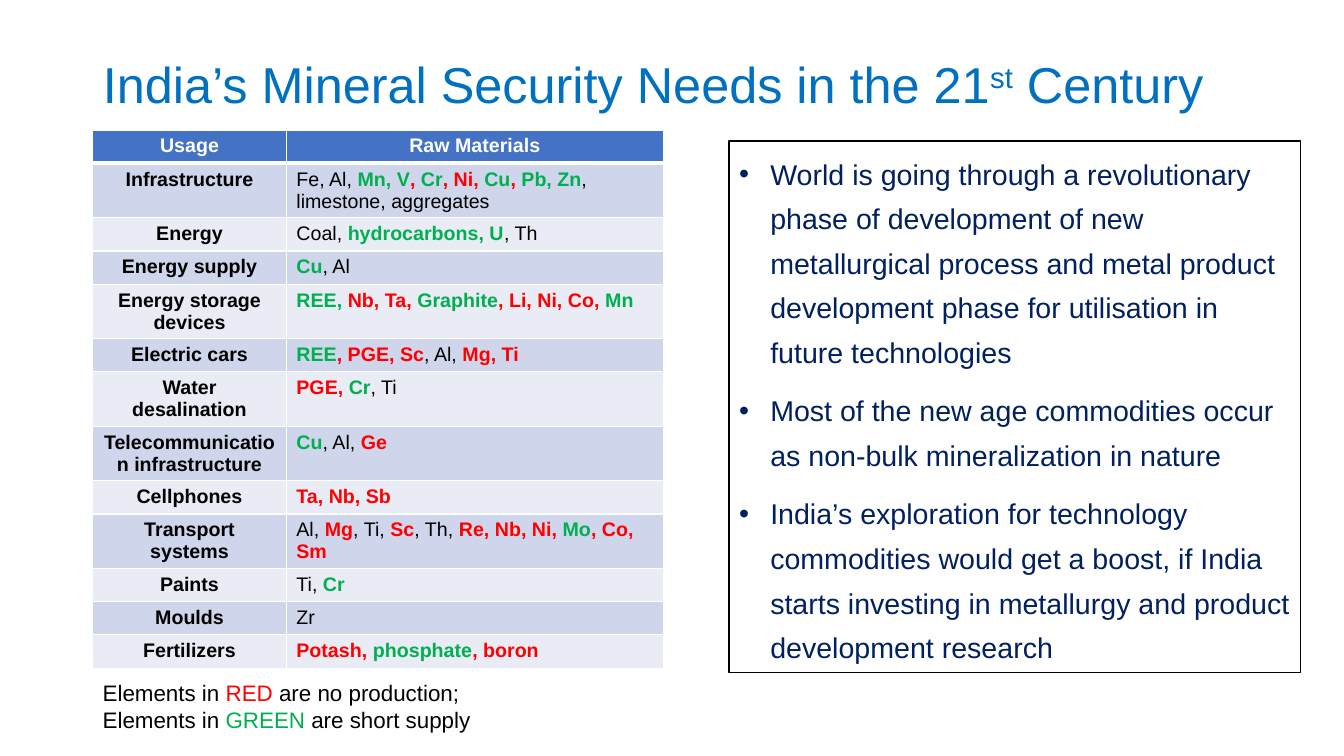
from lxml import etree
from pptx import Presentation
from pptx.dml.color import RGBColor
from pptx.enum import text
from pptx.oxml import ns
from pptx.util import Inches, Pt

FONT = "Arial"
BLACK, WHITE, RED, GREEN = "000000", "FFFFFF", "FF0000", "00B050"
BLUE, NAVY, HEADER = "0070C0", "002060", "4472C4"
BANDS = ("CFD5EA", "E9EBF5")

TITLE = (("India’s Mineral Security Needs in the 21", BLUE), ("st", BLUE), (" Century", BLUE))

# Usage, then the raw materials as (text, colour) runs
MATERIALS = (
    ("Infrastructure", (("Fe, Al, ", BLACK), ("Mn, V", GREEN), (", ", RED), ("Cr", GREEN),
                        (", Ni, ", RED), ("Cu", GREEN), (", ", RED), ("Pb, Zn", GREEN),
                        (", limestone, aggregates", BLACK))),
    ("Energy", (("Coal, ", BLACK), ("hydrocarbons, U", GREEN), (", Th", BLACK))),
    ("Energy supply", (("Cu", GREEN), (", Al", BLACK))),
    ("Energy storage devices", (("REE, ", GREEN), ("Nb, Ta, ", RED), ("Graphite", GREEN),
                                (", Li, Ni, Co, ", RED), ("Mn", GREEN))),
    ("Electric cars", (("REE", GREEN), (", PGE, Sc", RED), (", Al, ", BLACK), ("Mg, Ti", RED))),
    ("Water desalination", (("PGE, ", RED), ("Cr", GREEN), (", Ti", BLACK))),
    ("Telecommunication infrastructure", (("Cu", GREEN), (", Al, ", BLACK), ("Ge", RED))),
    ("Cellphones", (("Ta, Nb, Sb", RED),)),
    ("Transport systems", (("Al, ", BLACK), ("Mg", RED), (", Ti, ", BLACK), ("Sc", RED),
                           (", Th, ", BLACK), ("Re, Nb, Ni, ", RED), ("Mo", GREEN),
                           (", Co, Sm", RED))),
    ("Paints", (("Ti, ", BLACK), ("Cr", GREEN))),
    ("Moulds", (("Zr", BLACK),)),
    ("Fertilizers", (("Potash, ", RED), ("phosphate", GREEN), (", boron", RED))),
)
TWO_LINE_USAGES = ("Infrastructure", "Energy storage devices", "Water desalination",
                   "Telecommunication infrastructure", "Transport systems")

POINTS = (
    "World is going through a revolutionary phase of development of new metallurgical process "
    "and metal product development phase for utilisation in future technologies",
    "Most of the new age commodities occur as non-bulk mineralization in nature",
    "India’s exploration for technology commodities would get a boost, if India starts investing "
    "in metallurgy and product development research",
)

LEGEND = (("Elements in ", BLACK), ("RED", RED), (" are no production; Elements in ", BLACK),
          ("GREEN", GREEN), (" are short supply", BLACK))


def colour(value):
    return RGBColor.from_string(value)


def place(shape, left, top, width, height):
    shape.left, shape.top = Inches(left), Inches(top)
    shape.width, shape.height = Inches(width), Inches(height)


def style(font, size, hex_colour, bold=False):
    font.name, font.size, font.bold = FONT, Pt(size), bold
    font.color.rgb = colour(hex_colour)


def add_runs(paragraph, runs, size, bold_colours=()):
    for wording, hex_colour in runs:
        run = paragraph.add_run()
        run.text = wording
        style(run.font, size, hex_colour, hex_colour in bold_colours)


def set_borders(cell, bottom_width):
    """Draw white cell borders, one point wide except at the bottom."""
    properties = cell._tc.get_or_add_tcPr()
    for position, (side, width) in enumerate(zip("LRTB", (1, 1, 1, bottom_width))):
        line = etree.Element(ns.qn(f"a:ln{side}"), w=str(Pt(width)))
        fill = etree.SubElement(line, ns.qn("a:solidFill"))
        etree.SubElement(fill, ns.qn("a:srgbClr"), val=WHITE)
        properties.insert(position, line)


def fill_cell(cell, runs, fill, centred, bold_colours, bottom_width=1):
    cell.fill.solid()
    cell.fill.fore_color.rgb = colour(fill)
    set_borders(cell, bottom_width)
    paragraph = cell.text_frame.paragraphs[0]
    paragraph.alignment = text.PP_ALIGN.CENTER if centred else text.PP_ALIGN.LEFT
    add_runs(paragraph, runs, 14, bold_colours)


def add_title(slide):
    title = slide.shapes.title
    place(title, 0.92, 0.14, 11.5, 1.45)
    title.text_frame.vertical_anchor = text.MSO_ANCHOR.MIDDLE
    title.text_frame.auto_size = text.MSO_AUTO_SIZE.NONE
    paragraph = title.text_frame.paragraphs[0]
    paragraph.alignment = text.PP_ALIGN.LEFT
    paragraph.line_spacing = 0.9
    add_runs(paragraph, TITLE, 36)
    paragraph.runs[1]._r.get_or_add_rPr().set("baseline", "30000")


def add_materials_table(slide):
    frame = slide.shapes.add_table(len(MATERIALS) + 1, 2, Inches(0.92), Inches(1.29),
                                   Inches(5.66), Inches(5.27))
    table = frame.table
    table.columns[0].width, table.columns[1].width = Inches(1.92), Inches(3.74)
    table.rows[0].height = Inches(0.33)
    for column, heading in enumerate(("Usage", "Raw Materials")):
        fill_cell(table.cell(0, column), ((heading, WHITE),), HEADER, True, (WHITE,), 3)
    for row, (usage, materials) in enumerate(MATERIALS, start=1):
        band = BANDS[(row - 1) % 2]
        table.rows[row].height = Inches(0.54 if usage in TWO_LINE_USAGES else 0.33)
        fill_cell(table.cell(row, 0), ((usage, BLACK),), band, True, (BLACK,))
        fill_cell(table.cell(row, 1), materials, band, False, (RED, GREEN))


def add_bullet(paragraph):
    properties = paragraph._p.get_or_add_pPr()
    properties.set("marL", str(Inches(0.31)))
    properties.set("indent", str(Inches(-0.31)))
    etree.SubElement(properties, ns.qn("a:buFont"), typeface=FONT)
    etree.SubElement(properties, ns.qn("a:buChar"), char="•")


def add_points(slide):
    body = slide.placeholders[1]
    place(body, 7.23, 1.4, 5.67, 5.27)
    body.fill.solid()
    body.fill.fore_color.rgb = colour(WHITE)
    body.line.color.rgb = colour(BLACK)
    body.line.width = Pt(1)
    body.text_frame.text = "\n".join(POINTS)
    body.text_frame.auto_size = text.MSO_AUTO_SIZE.NONE
    for index, paragraph in enumerate(body.text_frame.paragraphs):
        add_bullet(paragraph)
        paragraph.line_spacing = 1.3
        paragraph.space_before = Pt(10 if index else 0)
        style(paragraph.runs[0].font, 20.4, NAVY)


def add_legend(slide):
    legend = slide.shapes.add_textbox(Inches(0.92), Inches(6.69), Inches(4.52), Inches(0.64))
    legend.text_frame.word_wrap = True
    add_runs(legend.text_frame.paragraphs[0], LEGEND, 16)


def main():
    presentation = Presentation()
    presentation.slide_width, presentation.slide_height = Inches(13.33), Inches(7.5)
    slide = presentation.slides.add_slide(presentation.slide_layouts[1])
    add_title(slide)
    add_materials_table(slide)
    add_points(slide)
    add_legend(slide)
    presentation.save("out.pptx")


if __name__ == "__main__":
    main()
